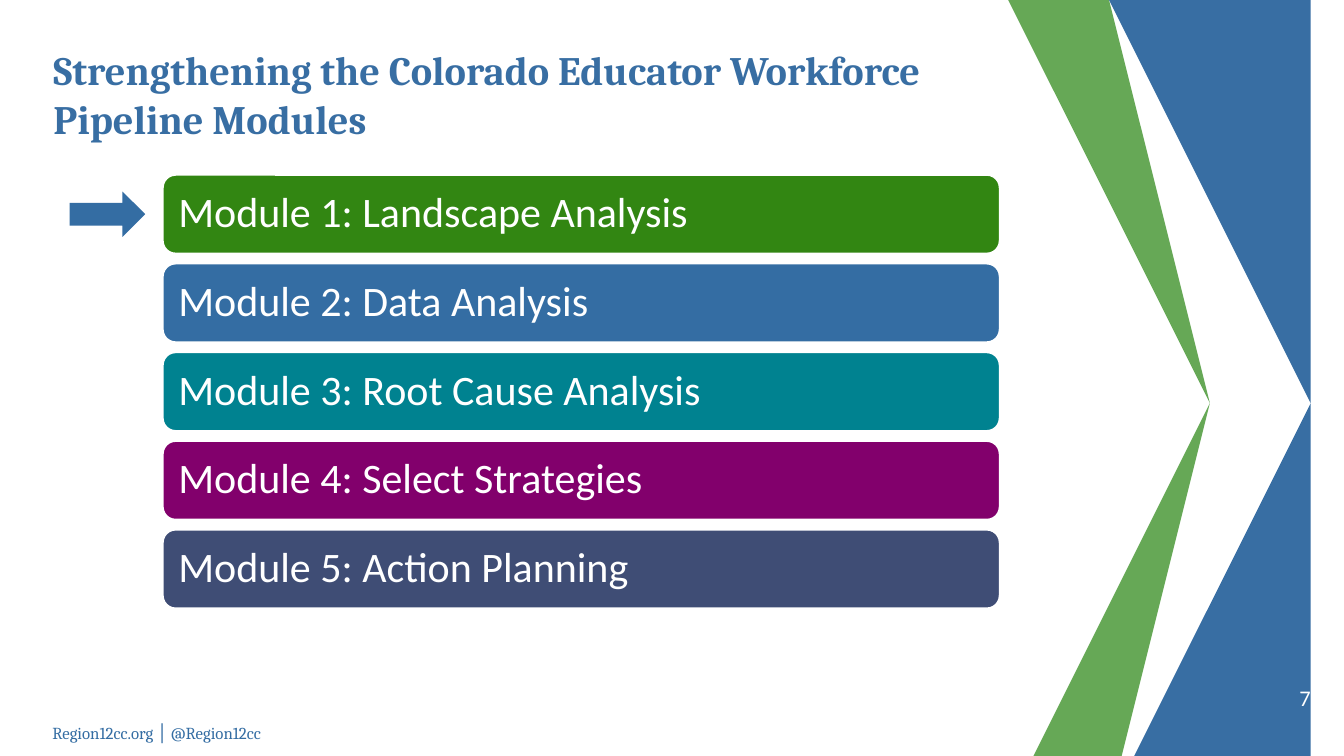
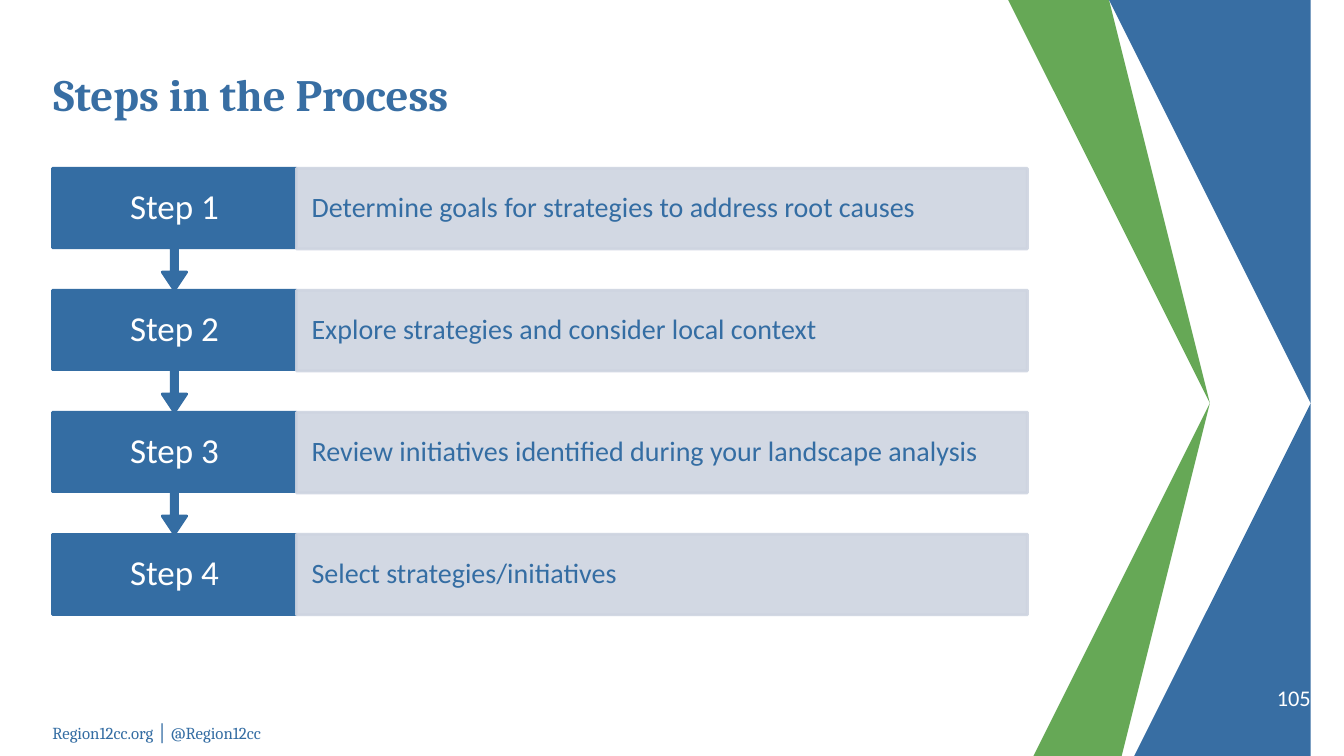
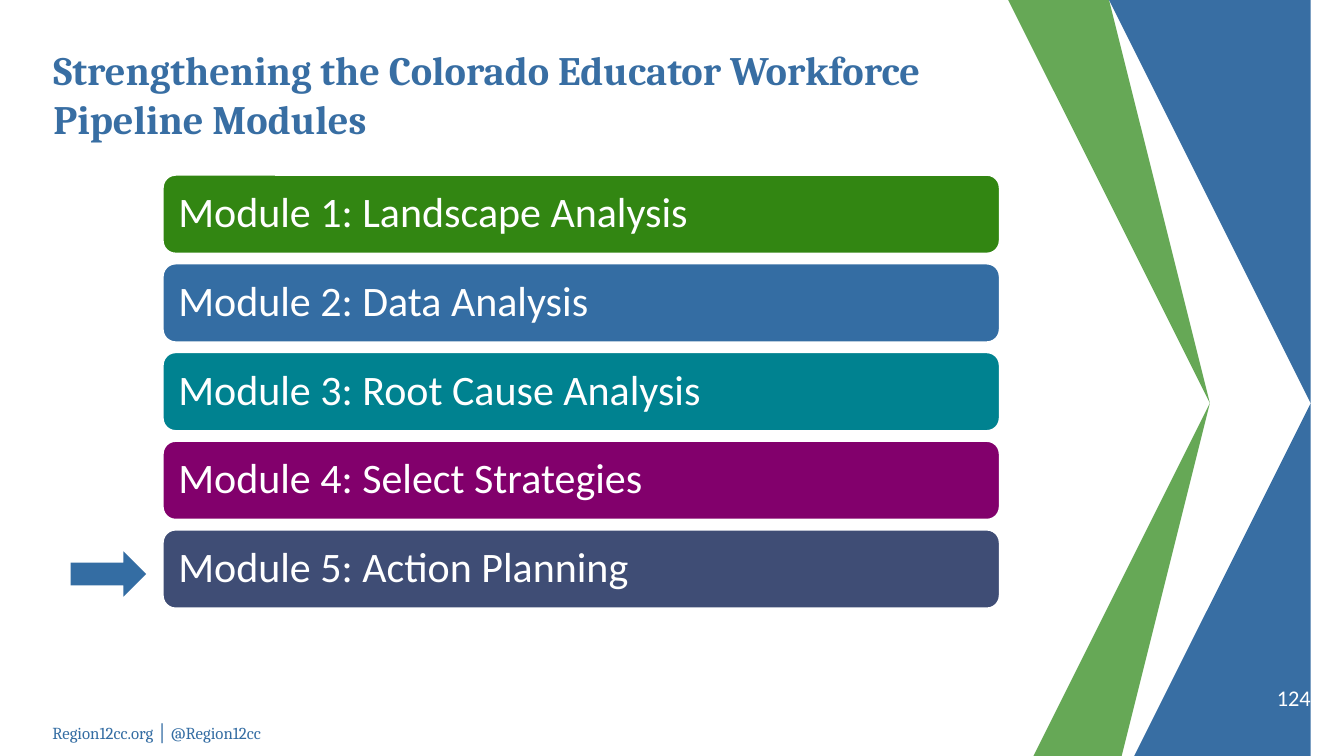
import pptx
import pptx.util
import pptx.dml.color
import pptx.enum.shapes
import pptx.enum.text
import pptx.oxml
import pptx.oxml.ns

Inches = pptx.util.Inches
Pt = pptx.util.Pt
Shape = pptx.enum.shapes.MSO_SHAPE
Anchor = pptx.enum.text.MSO_ANCHOR
Align = pptx.enum.text.PP_ALIGN

WIDE, HIGH = 13.33, 7.5
BLUE, BAND_BLUE, GREEN, PALE, WHITE = "346DA3", "386EA3", "569F44", "CED4E0", "FFFFFF"
LEFT = 0.52


def paint(fill, colour, opacity=100):
    fill.solid()
    fill.fore_color.rgb = pptx.dml.color.RGBColor.from_string(colour)
    if opacity < 100:
        tint = next(fill._xPr.iter(pptx.oxml.ns.qn("a:srgbClr")))
        alpha = pptx.oxml.parse_xml(
            f'<a:alpha {pptx.oxml.ns.nsdecls("a")} val="{opacity * 1000}"/>')
        tint.append(alpha)


def write(box, text, size, colour, name="Calibri", bold=False, align=Align.LEFT,
          anchor=Anchor.MIDDLE, inset=0, spacing=None):
    frame = box.text_frame
    frame_format = {
        "word_wrap": True, "auto_size": pptx.enum.text.MSO_AUTO_SIZE.NONE,
        "vertical_anchor": anchor, "margin_left": Inches(inset),
        "margin_right": Inches(inset), "margin_top": 0, "margin_bottom": 0}
    for key, value in frame_format.items():
        setattr(frame, key, value)
    para = frame.paragraphs[0]
    for key, value in {"alignment": align, "line_spacing": spacing}.items():
        setattr(para, key, value)
    span = para.add_run()
    span.text = text
    for key, value in {"name": name, "size": Pt(size), "bold": bold}.items():
        setattr(span.font, key, value)
    paint(span.font.fill, colour)


deck = pptx.Presentation()
deck.slide_width, deck.slide_height = Inches(WIDE), Inches(HIGH)
layout = deck.slide_layouts[5]

titles = [
    ("Strengthening the Colorado Educator Workforce Pipeline Modules", 28.8, "7"),
    ("Steps in the Process", 32, "105"),
    ("Strengthening the Colorado Educator Workforce Pipeline Modules", 28.8, "124"),
]
pages = []
for title, size, number in titles:
    page = deck.slides.add_slide(layout)
    pages.append(page)
    heading = page.shapes.title
    place = {"left": LEFT + 0.01, "top": 0.66, "width": 9.65, "height": 0.54}
    for key, value in place.items():
        setattr(heading, key, Inches(value))
    write(heading, title, size, BAND_BLUE, "Cambria", True, spacing=Pt(1.2 * size))
    counter = page.shapes.add_textbox(Inches(12.01), Inches(6.75), Inches(0.99), Inches(0.3))
    write(counter, number, 16, WHITE, align=Align.RIGHT, anchor=Anchor.BOTTOM)

middle, slant = HIGH / 2, 1.82
chevron = [(10.65, 0), (10.18, 0), (10.18 + slant, middle), (10.18, HIGH),
           (10.65, HIGH), (10.65 + slant, middle)]
side = [(WIDE, 0), (10.88, 0), (10.88 + slant, middle), (10.88, HIGH), (WIDE, HIGH)]
shared = []
for points, colour, opacity in [(chevron, GREEN, 90), (side, BAND_BLUE, 100)]:
    outline = pages[0].shapes.build_freeform(*points[0], scale=Inches(1))
    outline.add_line_segments(points[1:], close=True)
    band = outline.convert_to_shape()
    band.shadow.inherit = False
    band.line.fill.background()
    paint(band.fill, colour, opacity)
    shared.append(band)
footer = pages[0].shapes.add_textbox(Inches(LEFT), Inches(7.17), Inches(2.33), Inches(0.2))
write(footer, "Region12cc.org │ @Region12cc", 12, BLUE, "Cambria")
shared.append(footer)
for item in shared:
    layout.shapes.element.append(item.element)

modules = [
    ("Module 1: Landscape Analysis", "328612"),
    ("Module 2: Data Analysis", BLUE),
    ("Module 3: Root Cause Analysis", "008290"),
    ("Module 4: Select Strategies", "82006C"),
    ("Module 5: Action Planning", "3F4D75"),
]
for page, arrow_left, arrow_top in [(pages[0], 0.69, 1.9), (pages[2], 0.7, 5.47)]:
    for row, (text, colour) in enumerate(modules):
        bar = page.shapes.add_shape(
            Shape.ROUNDED_RECTANGLE, Inches(1.61), Inches(1.73 + 0.88 * row),
            Inches(8.31), Inches(0.79))
        bar.shadow.inherit = False
        paint(bar.fill, colour)
        paint(bar.line.fill, WHITE)
        bar.line.width = Pt(2)
        write(bar, text, 30, WHITE, inset=0.12, spacing=0.9)
    arrow = page.shapes.add_shape(
        Shape.RIGHT_ARROW, Inches(arrow_left), Inches(arrow_top), Inches(0.75), Inches(0.45))
    arrow.shadow.inherit = False
    arrow.line.fill.background()
    paint(arrow.fill, BLUE)

steps = [
    "Determine goals for strategies to address root causes",
    "Explore strategies and consider local context",
    "Review initiatives identified during your landscape analysis",
    "Select strategies/initiatives",
]
pitch, step_high, step_wide, detail_wide = 1.21, 0.8, 2.42, 7.25
for row, text in enumerate(steps):
    top = Inches(1.67 + pitch * row)
    last = row == len(steps) - 1
    step = pages[1].shapes.add_shape(
        Shape.RECTANGLE if last else Shape.DOWN_ARROW_CALLOUT, Inches(LEFT), top,
        Inches(step_wide), Inches(step_high if last else pitch))
    if not last:
        for index, value in enumerate([0.05, 0.1, 0.15, 0.65]):
            step.adjustments[index] = value
    detail = pages[1].shapes.add_shape(
        Shape.RECTANGLE, Inches(LEFT + step_wide), top, Inches(detail_wide), Inches(step_high))
    for box, colour, opacity in [(step, BLUE, 100), (detail, PALE, 90)]:
        box.shadow.inherit = False
        paint(box.fill, colour, opacity)
        paint(box.line.fill, colour, opacity)
        box.line.width = Pt(2)
    write(step, f"Step {row + 1}", 25, WHITE, align=Align.CENTER, inset=0.17, spacing=0.9)
    write(detail, text, 20, BLUE, inset=0.15, spacing=0.9)

deck.save("out.pptx")
